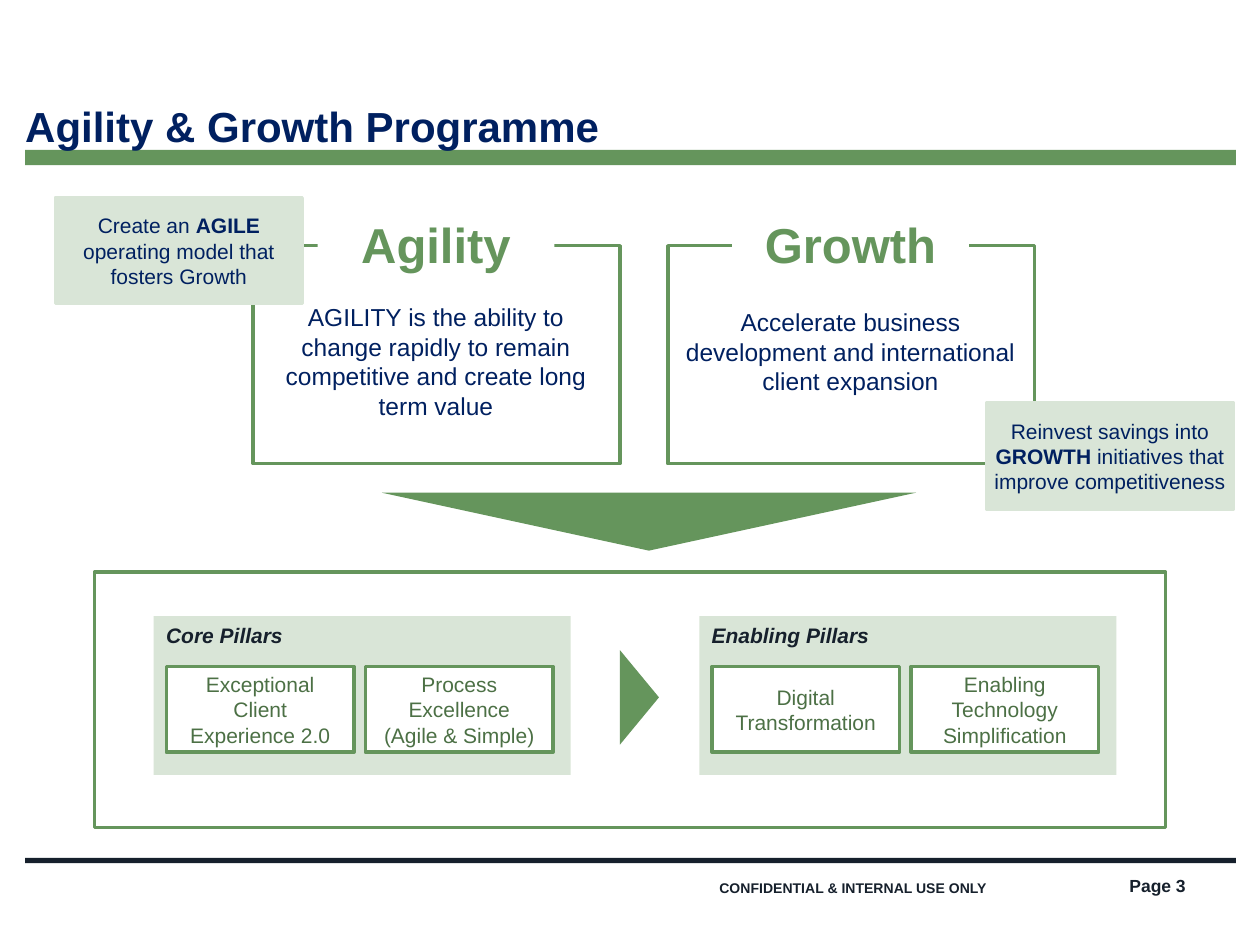
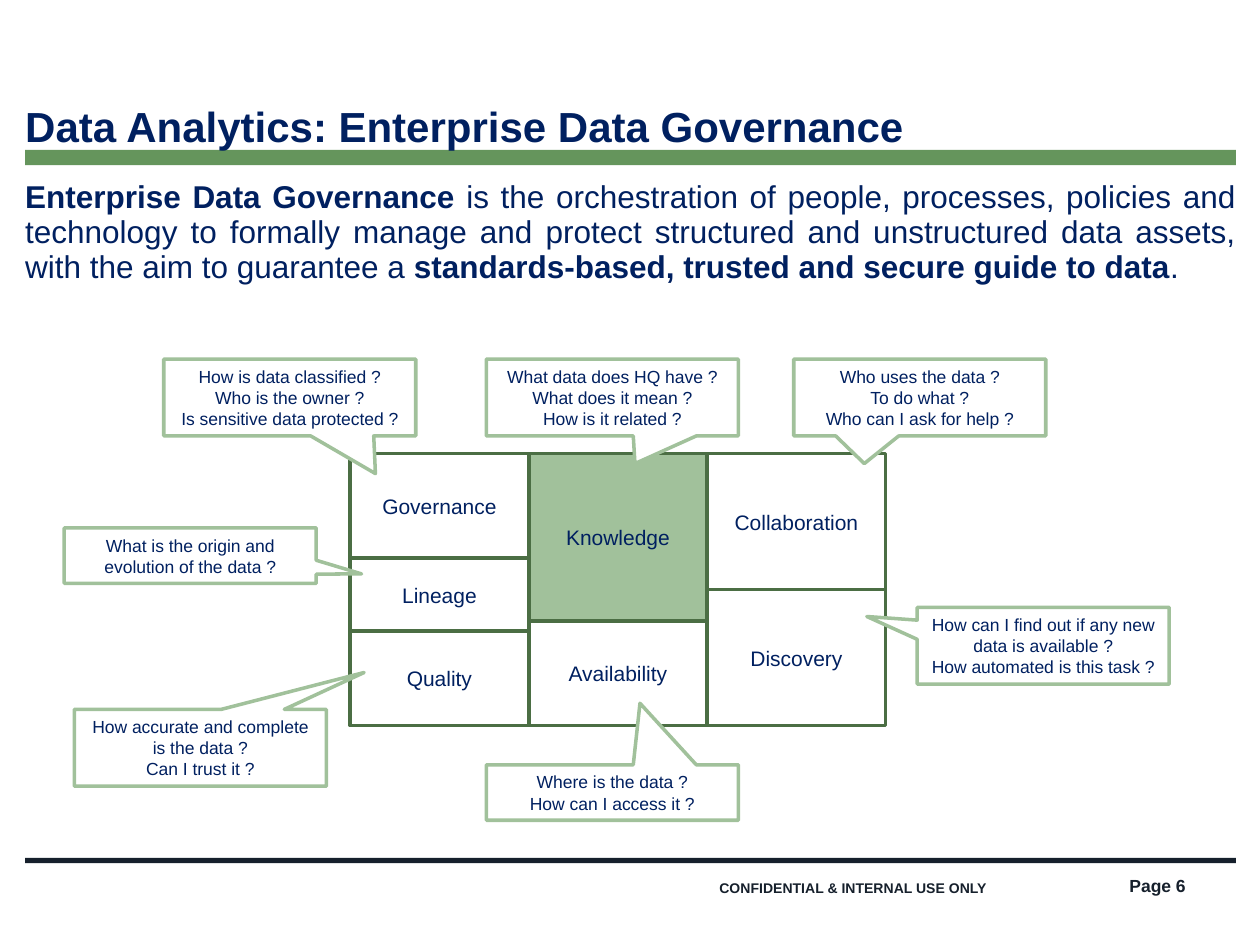
"""Build two slides on an agility programme and on data governance."""
from dataclasses import dataclass
from typing import NamedTuple

from lxml import etree
from pptx import Presentation
from pptx import util as u
from pptx.dml.color import RGBColor
from pptx.enum import shapes, text
from pptx.oxml.ns import qn

ALIGN = text.PP_ALIGN
ANCHOR = text.MSO_ANCHOR
KIND = shapes.MSO_SHAPE


@dataclass(frozen=True)
class Theme:
    """Hold the colours, font and type sizes of the deck."""
    font: str = "Arial"
    navy: str = "002060"
    ink: str = "16202C"
    green: str = "65955C"
    dark_green: str = "4C7045"
    grid_green: str = "4B6E44"
    soft_green: str = "A1C19B"
    pale_green: str = "D9E5D7"
    white: str = "FFFFFF"
    title: int = 24
    heading: int = 28
    lead: int = 18
    body: int = 14
    label: int = 12
    small: int = 10
    footer: int = 8
    outline: int = 2


THEME = Theme()


class Box(NamedTuple):
    """Describe a rectangle in inches."""
    left: float
    top: float
    width: float
    height: float

    def inner(self, left, top, width, height):
        """Return a box placed relative to this one."""
        return Box(self.left + left, self.top + top, width, height)

    def lengths(self):
        """Return the four sides as lengths."""
        return [u.Inches(side) for side in self]


@dataclass(frozen=True)
class Style:
    """Describe how a text looks."""
    size: int = THEME.label
    color: str = THEME.navy
    bold: bool = False
    italic: bool = False
    align: ALIGN = ALIGN.CENTER
    anchor: ANCHOR = ANCHOR.MIDDLE
    inset: tuple = (0.1, 0.05, 0.1, 0.05)


FLUSH = (0, 0, 0, 0)
TITLE = Style(THEME.title, bold=True, align=ALIGN.LEFT, anchor=ANCHOR.TOP, inset=FLUSH)
LEAD = Style(THEME.lead, align=ALIGN.JUSTIFY, anchor=ANCHOR.TOP, inset=FLUSH)
CONFIDENTIAL = Style(THEME.footer, THEME.ink, bold=True, align=ALIGN.LEFT, inset=FLUSH)
PAGE_NUMBER = Style(THEME.small, THEME.ink, bold=True, align=ALIGN.RIGHT, inset=FLUSH)
HEADING = Style(THEME.heading, THEME.green, bold=True, anchor=ANCHOR.TOP)
CARD_TEXT = Style(THEME.body, anchor=ANCHOR.TOP)
GROUP_LABEL = Style(color=THEME.ink, bold=True, italic=True, align=ALIGN.LEFT,
                    anchor=ANCHOR.TOP)
PILLAR = Style(color=THEME.dark_green)
NOTE = Style(inset=FLUSH)
CELL = Style()
QUESTION = Style(THEME.small)


def write(shape, paragraphs, style):
    """Fill a shape with paragraphs, each a string or a list of (text, bold) runs."""
    frame = shape.text_frame
    frame.word_wrap = True
    frame.auto_size = text.MSO_AUTO_SIZE.NONE
    frame.vertical_anchor = style.anchor
    (frame.margin_left, frame.margin_top,
     frame.margin_right, frame.margin_bottom) = map(u.Inches, style.inset)
    for index, runs in enumerate(paragraphs):
        para = frame.add_paragraph() if index else frame.paragraphs[0]
        para.alignment = style.align
        para.space_before = u.Pt(0)
        if isinstance(runs, str):
            runs = [(runs, style.bold)]
        for words, bold in runs:
            span = para.add_run()
            span.text = words
            font = span.font
            font.name = THEME.font
            font.size = u.Pt(style.size)
            font.bold = bold
            font.italic = style.italic
            font.color.rgb = RGBColor.from_string(style.color)


def add_shape(parent, box, fill=None, line=None, kind=KIND.RECTANGLE):
    """Add a preset shape without shadow."""
    shape = parent.shapes.add_shape(kind, *box.lengths())
    shape.shadow.inherit = False
    if fill:
        shape.fill.solid()
        shape.fill.fore_color.rgb = RGBColor.from_string(fill)
    else:
        shape.fill.background()
    if line:
        shape.line.color.rgb = RGBColor.from_string(line)
        shape.line.width = u.Pt(THEME.outline)
    else:
        shape.line.fill.background()
    return shape


def add_text(parent, box, paragraphs, style):
    """Add a text box."""
    write(parent.shapes.add_textbox(*box.lengths()), paragraphs, style)


def place(placeholder, box):
    """Move a placeholder to a box."""
    (placeholder.left, placeholder.top,
     placeholder.width, placeholder.height) = box.lengths()


def add_page(deck, layout, heading, number):
    """Add a slide with the shared bands and footer, and the title in front of them."""
    page = deck.slides.add_slide(deck.slide_layouts[layout])
    add_shape(page, Box(0.2, 1.19, 9.61, 0.12), THEME.green)
    add_shape(page, Box(0.2, 6.81, 9.61, 0.04), THEME.ink)
    add_text(page, Box(5.71, 7, 2.56, 0.09), ["CONFIDENTIAL & INTERNAL USE ONLY"],
             CONFIDENTIAL)
    add_text(page, Box(8.62, 6.95, 0.79, 0.16), [f"Page {number}"], PAGE_NUMBER)
    title = page.shapes.title
    place(title, Box(0.2, 0.8, 9.61, 0.39))
    write(title, [heading], TITLE)
    title.element.getparent().append(title.element)
    return page


def add_card(page, box, heading, words, text_top):
    """Add an outlined card whose heading interrupts the top edge."""
    card = page.shapes.add_group_shape()
    add_shape(card, box.inner(0, 0.3, box.width, box.height - 0.3),
              THEME.white, THEME.green)
    title = add_shape(card, box.inner(0.51, 0, 1.88, 0.57), THEME.white)
    write(title, [heading], HEADING)
    add_text(card, box.inner(0.04, text_top, 2.82, 1.04), [words], CARD_TEXT)


def add_note(page, box, runs):
    """Add a tinted note."""
    write(add_shape(page, box, THEME.pale_green, THEME.pale_green), [runs], NOTE)


def add_pillars(page, box, label, pillars):
    """Add a tinted panel with a row of pillars."""
    write(add_shape(page, box, THEME.pale_green), [label], GROUP_LABEL)
    for index, paragraphs in enumerate(pillars):
        pillar = add_shape(page, box.inner(0.1 + 1.58 * index, 0.4, 1.49, 0.68),
                           THEME.white, THEME.green)
        write(pillar, paragraphs, PILLAR)


def add_arrow(page, box, rotation):
    """Add a turned triangle."""
    add_shape(page, box, THEME.green, kind=KIND.ISOSCELES_TRIANGLE).rotation = rotation


def build_programme(deck):
    """Build the agility and growth slide."""
    page = add_page(deck, 5, "Agility & Growth Programme", 3)
    add_card(page, Box(2.01, 1.65, 2.91, 2.03), "Agility",
             "AGILITY is the ability to change rapidly to remain competitive "
             "and create long term value", 0.7)
    add_card(page, Box(5.3, 1.65, 2.91, 2.03), "Growth",
             "Accelerate business development and international client expansion", 0.74)
    add_note(page, Box(0.44, 1.57, 1.96, 0.84),
             [("Create an ", False), ("AGILE", True),
              (" operating model that fosters Growth", False)])
    add_note(page, Box(7.83, 3.2, 1.96, 0.84),
             [("Reinvest savings into ", False), ("GROWTH", True),
              (" initiatives that improve competitiveness", False)])
    add_arrow(page, Box(3.03, 3.91, 4.24, 0.46), 180)
    panel = Box(0.75, 4.54, 8.5, 2.03)
    add_shape(page, panel, THEME.white, THEME.green)
    add_pillars(page, panel.inner(0.47, 0.35, 3.31, 1.26), "Core Pillars",
                [["Exceptional Client Experience 2.0"],
                 ["Process", "Excellence", "(Agile & Simple)"]])
    add_pillars(page, panel.inner(4.8, 0.35, 3.31, 1.26), "Enabling Pillars",
                [["Digital Transformation"], ["Enabling Technology Simplification"]])
    add_arrow(page, panel.inner(3.95, 0.84, 0.75, 0.31), 90)


def add_lead(page, box, runs):
    """Put a justified statement without bullet in the body placeholder."""
    body = page.placeholders[1]
    place(body, box)
    para = body.text_frame.paragraphs[0]
    properties = para._p.get_or_add_pPr()
    properties.set("marL", "0")
    properties.set("indent", "0")
    etree.SubElement(properties, qn("a:buNone"))
    para.line_spacing = u.Pt(20)
    write(body, [runs], LEAD)


def add_domain_map(page, box, columns):
    """Stack the data domains in equal columns."""
    group = page.shapes.add_group_shape()
    width = box.width / len(columns)
    for index, column in enumerate(columns):
        top = 0
        for name, height in column:
            fill = THEME.soft_green if name == "Knowledge" else None
            cell = add_shape(group, box.inner(index * width, top, width, height),
                             fill, THEME.grid_green)
            write(cell, [name], CELL)
            top += height


def add_question(page, box, pointer, paragraphs):
    """Add a callout that points at a domain."""
    callout = add_shape(page, box, THEME.white, THEME.soft_green,
                        KIND.RECTANGULAR_CALLOUT)
    callout.adjustments[0], callout.adjustments[1] = pointer
    write(callout, paragraphs, QUESTION)


def build_governance(deck):
    """Build the data governance slide."""
    page = add_page(deck, 1, "Data Analytics: Enterprise Data Governance", 6)
    add_lead(page, Box(0.2, 1.43, 9.61, 0.84), [
        ("Enterprise Data Governance", True),
        (" is the orchestration of people, processes, policies and technology to "
         "formally manage and protect structured and unstructured data assets, "
         "with the aim to guarantee a ", False),
        ("standards-based, trusted and secure guide to data", True),
        (".", False)])
    add_domain_map(page, Box(2.78, 3.6, 4.25, 2.16), [
        [("Governance", 0.83), ("Lineage", 0.58), ("Quality", 0.75)],
        [("Knowledge", 1.33), ("Availability", 0.83)],
        [("Collaboration", 1.08), ("Discovery", 1.08)]])
    short, tall = 0.44, 0.61
    questions = [
        (1.3, 2.85, tall, (0.34, 0.99),
         ["How is data classified ?", "Who is the owner ?",
          "Is sensitive data protected ?"]),
        (3.86, 2.85, tall, (0.09, 0.86),
         ["What data does HQ have ?", "What does it mean ?", "How is it related ?"]),
        (6.3, 2.85, tall, (-0.22, 0.86),
         ["Who uses the data ?", "To do what ?", "Who can I ask for help ?"]),
        (0.51, 4.19, short, (0.68, 0.33),
         ["What is the origin and evolution of the data ?"]),
        (7.28, 4.82, tall, (-0.7, -0.38),
         ["How can I find out if any new data is available ?",
          "How automated is this task ?"]),
        (0.59, 5.63, tall, (0.65, -0.98),
         ["How accurate and complete is the data ?", "Can I trust it ?"]),
        (3.86, 6.07, short, (0.11, -1.61),
         ["Where is the data ?", "How can I access it ?"]),
    ]
    for left, top, height, pointer, paragraphs in questions:
        add_question(page, Box(left, top, 2, height), pointer, paragraphs)


def main():
    """Build and save the deck."""
    deck = Presentation()
    deck.slide_width, deck.slide_height = u.Inches(10), u.Inches(7.5)
    build_programme(deck)
    build_governance(deck)
    deck.save("out.pptx")


if __name__ == "__main__":
    main()
